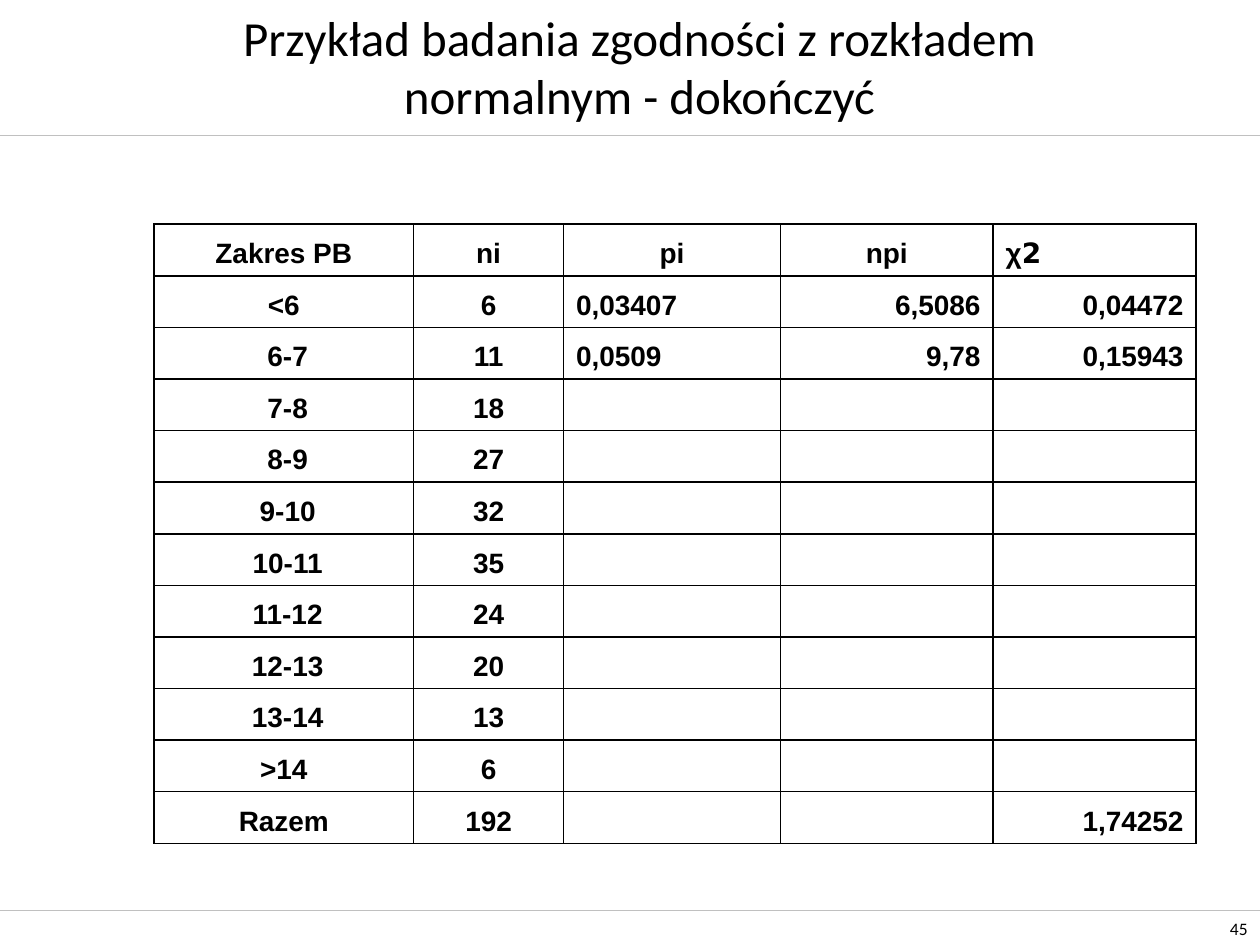
from lxml import etree
from pptx import Presentation
from pptx.dml.color import RGBColor
from pptx.enum.shapes import MSO_CONNECTOR
from pptx.enum.text import MSO_ANCHOR, PP_ALIGN
from pptx.oxml.ns import qn
from pptx.util import Cm, Pt

LEFT, MID, RIGHT = PP_ALIGN.LEFT, PP_ALIGN.CENTER, PP_ALIGN.RIGHT
BOTTOM, MIDDLE = MSO_ANCHOR.BOTTOM, MSO_ANCHOR.MIDDLE
STRAIGHT = MSO_CONNECTOR.STRAIGHT

TITLE = "Przykład badania zgodności z rozkładem normalnym - dokończyć"
NUMBER = "45"
HEAD = ["Zakres PB", "ni", "pi", "npi", "χ2"]
ROWS = [
    ["<6", "6", "0,03407", "6,5086", "0,04472"],
    [" 6-7", "11", "0,0509", "9,78", "0,15943"],
    [" 7-8", "18"],
    [" 8-9", "27"],
    [" 9-10", "32"],
    [" 10-11", "35"],
    [" 11-12", "24"],
    [" 12-13", "20"],
    [" 13-14", "13"],
    [">14", "6"],
    ["Razem", "192", "", "", "1,74252"],
]
HEAD_ALIGN = [MID, MID, MID, MID, LEFT]
BODY_ALIGN = [MID, MID, LEFT, RIGHT, RIGHT]

WIDTHS = [5.24, 3.02, 4.37, 4.29, 4.09]
ROW_H = 1.04
INDENT = Cm(0.97)
PAGE_W, PAGE_H = 25.4, 19.05
RULES = [2.72, 18.34]

THEME = {
    "ink": RGBColor(0, 0, 0),
    "rule": RGBColor(0xC0, 0xC0, 0xC0),
    "text": "Calibri",
    "table": "Arial",
    "symbol": "DejaVu Sans",
    "title_size": 28,
    "table_size": 16,
    "number_size": 10,
    "rule_width": 0.25,
    "border": 1,
}


def style(para, face, size, align, bold=False):
    para.alignment = align
    font = para.font
    font.name, font.size, font.bold = face, Pt(size), bold
    font.color.rgb = THEME["ink"]


def add_text(slide, text, box, size, align, anchor):
    frame = slide.shapes.add_textbox(*map(Cm, box)).text_frame
    frame.word_wrap = True
    frame.vertical_anchor = anchor
    para = frame.paragraphs[0]
    para.text = text
    style(para, THEME["text"], size, align)


def add_rule(slide, top):
    line = slide.shapes.add_connector(STRAIGHT, 0, Cm(top), Cm(PAGE_W), Cm(top))
    line.line.color.rgb = THEME["rule"]
    line.line.width = Pt(THEME["rule_width"])
    etree.SubElement(line._element.spPr, qn("a:effectLst"))


def add_border(cell):
    props = cell._tc.get_or_add_tcPr()
    for side in ("lnL", "lnR", "lnT", "lnB"):
        edge = etree.SubElement(props, qn("a:" + side), w=str(Pt(THEME["border"])))
        fill = etree.SubElement(edge, qn("a:solidFill"))
        etree.SubElement(fill, qn("a:srgbClr"), val=str(THEME["ink"]))


def fill_cell(cell, text, align):
    add_border(cell)
    cell.fill.background()
    cell.vertical_anchor = BOTTOM
    para = cell.text_frame.paragraphs[0]
    style(para, THEME["table"], THEME["table_size"], align, True)
    props = para._p.get_or_add_pPr()
    props.set("marL", str(INDENT))
    props.set("indent", str(-INDENT))
    if text.startswith("χ"):
        para.add_run().text = text[0]
        power = para.add_run()
        power.text = text[1:]
        power.font.name = THEME["symbol"]
    elif text:
        para.add_run().text = text


def add_grid(slide, left, top):
    count = len(ROWS) + 1
    size = (Cm(sum(WIDTHS)), Cm(ROW_H * count))
    table = slide.shapes.add_table(
        count, len(WIDTHS), Cm(left), Cm(top), *size).table
    table.first_row = table.horz_banding = False
    for col, width in zip(table.columns, WIDTHS):
        col.width = Cm(width)
    for r, texts in enumerate([HEAD] + ROWS):
        table.rows[r].height = Cm(ROW_H)
        texts = texts + [""] * (len(WIDTHS) - len(texts))
        aligns = BODY_ALIGN if r else HEAD_ALIGN
        for c, (text, align) in enumerate(zip(texts, aligns)):
            fill_cell(table.cell(r, c), text, align)


def main():
    deck = Presentation()
    deck.slide_width, deck.slide_height = Cm(PAGE_W), Cm(PAGE_H)
    slide = deck.slides.add_slide(deck.slide_layouts[6])
    for top in RULES:
        add_rule(slide, top)
    add_text(slide, NUMBER, (24.1, 18.34, 1.3, 0.71),
             THEME["number_size"], RIGHT, BOTTOM)
    add_text(slide, TITLE, (2.49, 0.53, 20.8, 1.6),
             THEME["title_size"], MID, MIDDLE)
    add_grid(slide, 3.1, 4.52)
    deck.save("out.pptx")


if __name__ == "__main__":
    main()
